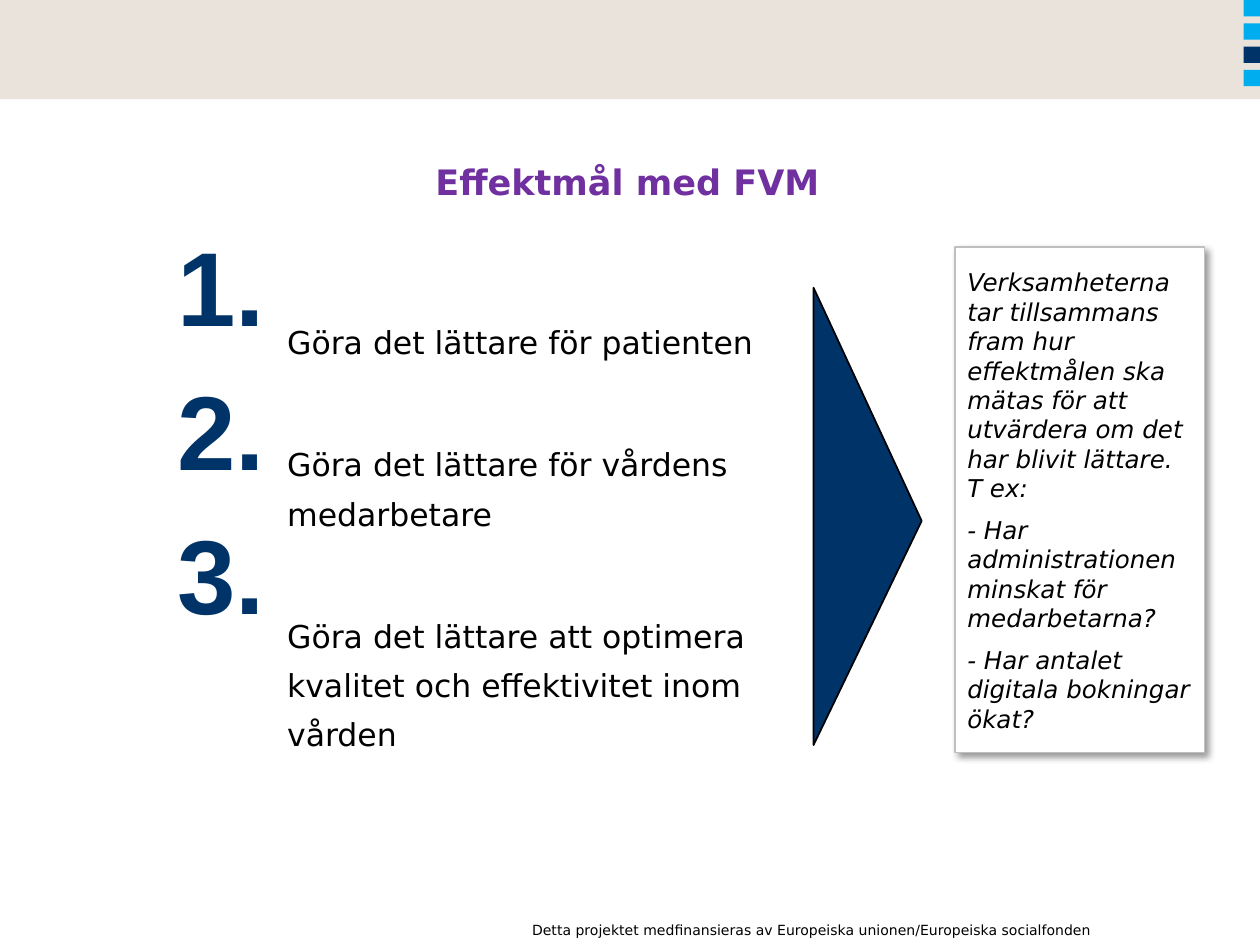
from typing import NamedTuple

from lxml.etree import SubElement
from pptx import Presentation
from pptx.dml.color import RGBColor
from pptx.enum.shapes import MSO_SHAPE as Shape
from pptx.enum.text import MSO_ANCHOR as Anchor, MSO_AUTO_SIZE as AutoSize, PP_ALIGN as Align
from pptx.oxml.ns import qn
from pptx.util import Cm, Pt

SAND = RGBColor(0xE9, 0xE3, 0xDC)
CYAN = RGBColor(0x00, 0xAE, 0xEF)
NAVY = RGBColor(0x00, 0x34, 0x68)
PURPLE = RGBColor(0x70, 0x30, 0xA0)
BLACK = RGBColor(0, 0, 0)
WHITE = RGBColor(0xFF, 0xFF, 0xFF)
GREY = RGBColor(0xBF, 0xBF, 0xBF)
SANS = "DejaVu Sans"


class Area(NamedTuple):
    """Left, top, width and height in centimetres."""
    left: float
    top: float
    width: float
    height: float


class Style(NamedTuple):
    size: float
    color: RGBColor = BLACK
    font: str = SANS
    bold: bool = False
    italic: bool = False
    align: Align = Align.LEFT
    line_spacing: float = 1.0
    gap: float = 0


class Insets(NamedTuple):
    """Inner margins in centimetres."""
    left: float = 0.25
    top: float = 0.13
    right: float = 0.25
    bottom: float = 0.13


def add_block(page, kind: Shape, area: Area, fill: RGBColor, line: RGBColor | None = None,
              weight: float = 1):
    block = page.shapes.add_shape(kind, *map(Cm, area))
    block.shadow.inherit = False
    block.fill.solid()
    block.fill.fore_color.rgb = fill
    if line is None:
        block.line.fill.background()
    else:
        block.line.color.rgb = line
        block.line.width = Pt(weight)
    return block


def add_text(page, area: Area, texts: list[str], style: Style, insets: Insets = Insets(),
             anchor: Anchor = Anchor.TOP, auto_size: AutoSize = AutoSize.NONE) -> None:
    frame = page.shapes.add_textbox(*map(Cm, area)).text_frame
    frame.word_wrap = True
    frame.auto_size = auto_size
    frame.vertical_anchor = anchor
    frame.margin_left, frame.margin_top, frame.margin_right, frame.margin_bottom = map(Cm, insets)
    frame.text = "\n".join(texts)
    for index, para in enumerate(frame.paragraphs):
        para.alignment = style.align
        para.line_spacing = style.line_spacing
        para.space_before = Pt(style.gap if index else 0)
        for span in para.runs:
            span.font.name = style.font
            span.font.size = Pt(style.size)
            span.font.bold = style.bold
            span.font.italic = style.italic
            span.font.color.rgb = style.color


def add_shadow(block, blur: float, distance: float, degrees: int, opacity: int) -> None:
    effects = block.element.spPr.find(qn("a:effectLst"))
    shadow = SubElement(effects, qn("a:outerShdw"), blurRad=str(Pt(blur)), dist=str(Pt(distance)),
                        dir=str(degrees * 60000), algn="tl", rotWithShape="0")
    color = SubElement(shadow, qn("a:srgbClr"), val=str(BLACK))
    SubElement(color, qn("a:alpha"), val=str(opacity * 1000))


def main() -> None:
    deck = Presentation()
    deck.slide_width, deck.slide_height = Cm(25.4), Cm(19.05)
    page = deck.slides.add_slide(deck.slide_layouts[6])

    # Header band with its column of squares
    add_block(page, Shape.RECTANGLE, Area(0, 0, 25.4, 2), SAND)
    for row, color in enumerate((CYAN, CYAN, NAVY, CYAN)):
        add_block(page, Shape.RECTANGLE, Area(25.07, 0.47 * row, 0.33, 0.33), color)

    # Footer
    add_text(page, Area(10.19, 18.44, 12.07, 0.61),
             ["Detta projektet medfinansieras av Europeiska unionen/Europeiska socialfonden"],
             Style(8, align=Align.RIGHT), auto_size=AutoSize.SHAPE_TO_FIT_TEXT)

    # Title
    add_text(page, Area(1.27, 2.39, 22.86, 1.8), ["Effektmål med FVM"],
             Style(20, PURPLE, bold=True, align=Align.CENTER),
             Insets(0, 0.1, 0.1, 0.1), Anchor.BOTTOM)

    # Goals and their numbers
    goals = [
        "Göra det lättare för patienten",
        "Göra det lättare för vårdens medarbetare",
        "Göra det lättare att optimera kvalitet och effektivitet inom vården",
    ]
    add_text(page, Area(5.54, 6.15, 11.18, 8.2), goals, Style(18, line_spacing=1.3, gap=42))
    number_style = Style(60, NAVY, "Arial", bold=True, align=Align.CENTER)
    for index in range(len(goals)):
        add_text(page, Area(3.38, 4.19 + 2.9 * index, 2.16, 1.73), [f"{index + 1}."],
                 number_style, Insets(0.1, 0.28, 0.1, 0.1))

    # Card on how the goals are measured
    card = add_block(page, Shape.RECTANGLE, Area(19.25, 4.98, 5.03, 10.19), WHITE, GREY, 0.75)
    add_shadow(card, blur=4, distance=3, degrees=45, opacity=40)
    add_text(page, Area(19.25, 5.26, 5.03, 10.44), [
        "Verksamheterna tar tillsammans fram hur effektmålen ska mätas för att "
        "utvärdera om det har blivit lättare. T ex:",
        "- Har administrationen minskat för medarbetarna?",
        "- Har antalet digitala bokningar ökat?",
    ], Style(14, italic=True, gap=7), auto_size=AutoSize.SHAPE_TO_FIT_TEXT)

    # Triangle pointing from the goals to the card
    pointer = add_block(page, Shape.ISOSCELES_TRIANGLE, Area(12.88, 9.32, 9.22, 2.18), NAVY, BLACK)
    pointer.rotation = 90
    pointer.adjustments[0] = 0.51

    deck.save("out.pptx")


if __name__ == "__main__":
    main()
